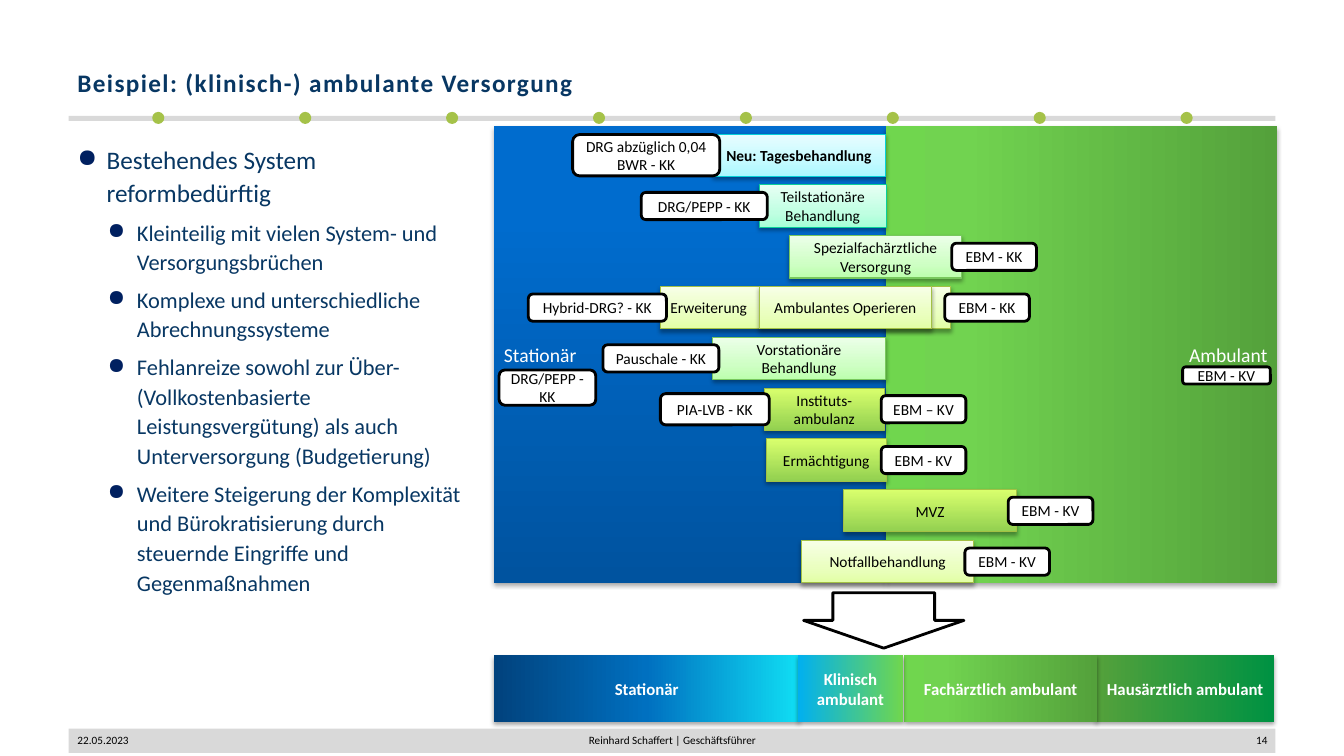
from lxml import etree
from pptx import Presentation
from pptx.dml.color import RGBColor
from pptx.enum.shapes import MSO_SHAPE
from pptx.enum.text import MSO_ANCHOR, PP_ALIGN
from pptx.oxml.ns import qn
from pptx.util import Inches, Pt

BLACK = RGBColor(0, 0, 0)
WHITE = RGBColor(255, 255, 255)
NAVY = RGBColor(0x08, 0x37, 0x63)
BULLET = RGBColor(0x00, 0x20, 0x60)
GREY = RGBColor(0xD9, 0xD9, 0xD9)
DOT_GREEN = RGBColor(0xA5, 0xC2, 0x49)
FONT = "Calibri"


def stops(*pairs):
    return [(position, RGBColor.from_string(color)) for position, color in pairs]


# Gradient stops of the panels and phases
BLUE_PANEL = stops((0, "00539F"), (80, "006CCE"), (100, "006DCF"))
GREEN_PANEL = stops((0, "54A13B"), (80, "71D350"), (100, "70D64E"))
BLUE_PHASE = stops((0, "01427D"), (50, "0070C0"), (100, "10DEF4"))
CLINIC_PHASE = stops((0, "00B0F0"), (100, "70D64E"))
FAMILY_PHASE = stops((1, "009242"), (100, "54A13B"))

# Bar styles: gradient stops and border colour
CYAN = (stops((0, "ABF8FF"), (35, "C3FAFF"), (100, "E8FDFF")), RGBColor(0x06, 0xD0, 0xD9))
MINT = (stops((0, "A6FFD7"), (35, "C0FFE2"), (100, "E7FFF4")), RGBColor(0x0B, 0xCF, 0x9A))
PALE_GREEN = (stops((0, "BCFFAD"), (35, "CFFFC5"), (100, "ECFFE9")), RGBColor(0x78, 0xC8, 0x5D))
PALE_LIME = (stops((0, "E2FFA5"), (35, "EAFFBF"), (100, "F7FFE7")), RGBColor(0xA3, 0xC1, 0x44))
LIME = (stops((0, "92D050"), (100, "D9FF6D")), RGBColor(0xA3, 0xC1, 0x44))

# Each row: bars (left, width, style, text), tags (left, width, height, text)
ROWS = [
    ([(7.07, 1.71, CYAN, "Neu: Tagesbehandlung")], [(5.68, 1.46, 0.41, "DRG abzüglich 0,04 BWR - KK")]),
    ([(7.53, 1.26, MINT, "Teilstationäre Behandlung")], [(6.36, 1.25, 0.27, "DRG/PEPP - KK")]),
    ([(7.83, 1.71, PALE_GREEN, "Spezialfachärztliche Versorgung")], [(9.44, 0.84, 0.27, "EBM - KK")]),
    ([(6.55, 2.88, PALE_LIME, "Erweiterung"), (7.53, 1.71, PALE_LIME, "Ambulantes Operieren")],
     [(5.24, 1.37, 0.27, "Hybrid-DRG? - KK"), (9.37, 0.84, 0.27, "EBM - KK")]),
    ([(7.07, 1.71, PALE_GREEN, "Vorstationäre Behandlung")], [(5.98, 1.15, 0.27, "Pauschale - KK")]),
    ([(7.58, 1.19, LIME, "Instituts-ambulanz")],
     [(6.55, 1.08, 0.31, "PIA-LVB - KK"), (8.74, 0.84, 0.27, "EBM – KV")]),
    ([(7.6, 1.19, LIME, "Ermächtigung")], [(8.74, 0.84, 0.27, "EBM - KV")]),
    ([(8.37, 1.71, LIME, "MVZ")], [(10, 0.84, 0.27, "EBM - KV")]),
    ([(7.95, 1.71, PALE_LIME, "Notfallbehandlung")], [(9.57, 0.84, 0.27, "EBM - KV")]),
]
BULLETS = [
    "Bestehendes System reformbedürftig",
    "Kleinteilig mit vielen System- und Versorgungsbrüchen",
    "Komplexe und unterschiedliche Abrechnungssysteme",
    "Fehlanreize sowohl zur Über- (Vollkostenbasierte Leistungsvergütung) als auch "
    "Unterversorgung (Budgetierung)",
    "Weitere Steigerung der Komplexität und Bürokratisierung durch steuernde Eingriffe "
    "und Gegenmaßnahmen",
]


def write(shape, text, size, color, align=PP_ALIGN.CENTER, bold=False, anchor=MSO_ANCHOR.MIDDLE):
    frame = shape.text_frame
    frame.text = text
    frame.word_wrap = True
    frame.vertical_anchor = anchor
    paragraph = frame.paragraphs[0]
    paragraph.alignment = align
    font = paragraph.runs[0].font
    font.name, font.size, font.bold = FONT, Pt(size), bold
    font.color.rgb = color


def add_text(slide, box, *args, **options):
    shape = slide.shapes.add_textbox(*map(Inches, box))
    write(shape, *args, **options)
    return shape


def add_plain(slide, kind, box, fill, line=None, width=2):
    shape = slide.shapes.add_shape(kind, *map(Inches, box))
    shape.shadow.inherit = False
    shape.fill.solid()
    shape.fill.fore_color.rgb = fill
    if line is None:
        shape.line.fill.background()
    else:
        shape.line.color.rgb = line
        shape.line.width = Pt(width)
    return shape


def add_gradient(slide, box, gradient, angle, line=None):
    """Rectangle with a gradient (clockwise angle) and a soft shadow below."""
    shape = add_plain(slide, MSO_SHAPE.RECTANGLE, box, WHITE, line, 0.75)
    shape.fill.gradient()
    shape.fill.gradient_angle = -angle % 360
    properties = shape._element.spPr
    stop_list = properties.find(qn("a:gradFill")).find(qn("a:gsLst"))
    for stop in list(stop_list):
        stop_list.remove(stop)
    for position, color in gradient:
        stop = etree.SubElement(stop_list, qn("a:gs"), pos=str(position * 1000))
        etree.SubElement(stop, qn("a:srgbClr"), val=str(color))
    shadow = etree.SubElement(properties.find(qn("a:effectLst")), qn("a:outerShdw"),
                              blurRad=str(Pt(3.1)), dist=str(Pt(1.8)), dir="5400000", rotWithShape="0")
    color = etree.SubElement(shadow, qn("a:srgbClr"), val="000000")
    etree.SubElement(color, qn("a:alpha"), val="35000")
    return shape


def add_tag(slide, box, text):
    write(add_plain(slide, MSO_SHAPE.ROUNDED_RECTANGLE, box, WHITE, BLACK), text, 11, BLACK)


def add_header(slide, left, top, width):
    title = add_text(slide, (left, top, 9.23, 0.84), "Beispiel: (klinisch-) ambulante Versorgung",
                     18, NAVY, PP_ALIGN.LEFT, True, MSO_ANCHOR.BOTTOM)
    title.text_frame.paragraphs[0].runs[0].font._element.set("spc", "100")
    # Rule with evenly spaced dots
    add_plain(slide, MSO_SHAPE.RECTANGLE, (left + 0.01, top + 0.97, width, 0.05), GREY)
    for index in range(8):
        add_plain(slide, MSO_SHAPE.OVAL, (left + 0.84 + index * 1.457, top + 0.93, 0.12, 0.12), DOT_GREEN)


def add_bullets(slide, box):
    frame = slide.shapes.add_textbox(*map(Inches, box)).text_frame
    frame.word_wrap = True
    for index, text in enumerate(BULLETS):
        paragraph = frame.add_paragraph() if index else frame.paragraphs[0]
        paragraph.text = text
        paragraph.line_spacing = 1.1
        if index:
            paragraph.level = 1
            paragraph.space_before = Pt(6)
        properties = paragraph._p.get_or_add_pPr()
        properties.set("marL", str(Inches(0.59 if index else 0.29)))
        properties.set("indent", str(Inches(-0.29)))
        color = etree.SubElement(properties, qn("a:buClr"))
        etree.SubElement(color, qn("a:srgbClr"), val=str(BULLET))
        etree.SubElement(properties, qn("a:buChar"), char="●")
        font = paragraph.runs[0].font
        font.name, font.size = FONT, Pt(16 if index else 18)
        font.color.rgb = NAVY


def add_care_map(slide, left, top, width, height):
    # Inpatient and outpatient halves
    half = width / 2
    inpatient = add_gradient(slide, (left, top, half, height), BLUE_PANEL, 270)
    write(inpatient, "Stationär", 14, WHITE, PP_ALIGN.LEFT)
    outpatient = add_gradient(slide, (left + half, top, half, height), GREEN_PANEL, 180)
    write(outpatient, "Ambulant", 14, WHITE, PP_ALIGN.RIGHT)
    add_tag(slide, (left + 0.05, top + 2.42, 0.96, 0.35), "DRG/PEPP - KK")
    add_tag(slide, (left + 6.83, top + 2.39, 0.87, 0.17), "EBM - KV")
    # Care forms with their payment tags
    bar_height = 0.42
    for index, (bars, tags) in enumerate(ROWS):
        row_top = top + 0.08 + index * 0.504
        for bar_left, bar_width, (gradient, border), text in bars:
            bar = add_gradient(slide, (bar_left, row_top, bar_width, bar_height), gradient, 270, border)
            align = PP_ALIGN.LEFT if text == "Erweiterung" else PP_ALIGN.CENTER
            write(bar, text, 11, BLACK, align, bold=index == 0)
        for tag_left, tag_width, tag_height, text in tags:
            tag_top = row_top + (bar_height - tag_height) / 2
            add_tag(slide, (tag_left, tag_top, tag_width, tag_height), text)


def add_future_phases(slide, left, top):
    phases = [
        (0, 3.03, BLUE_PHASE, 0, "Stationär"),
        (5.97, 1.77, FAMILY_PHASE, 180, "Hausärztlich ambulant"),
        (4.07, 1.91, GREEN_PANEL, 180, "Fachärztlich ambulant"),
        (3.01, 1.05, CLINIC_PHASE, 0, "Klinisch ambulant"),
    ]
    for offset, width, gradient, angle, text in phases:
        phase = add_gradient(slide, (left + offset, top, width, 0.66), gradient, angle)
        write(phase, text, 12, WHITE, bold=True)
    arrow = add_plain(slide, MSO_SHAPE.DOWN_ARROW, (left + 3.07, top - 0.62, 1.59, 0.55), WHITE, BLACK)
    arrow.adjustments[0] = 0.635
    arrow.adjustments[1] = 0.5


def add_footer(slide, left, top, width):
    add_plain(slide, MSO_SHAPE.RECTANGLE, (left, top, width, 0.24), GREY)
    parts = [(-0.01, 3.11, "22.05.2023", PP_ALIGN.LEFT),
             (3.88, 4.22, "Reinhard Schaffert | Geschäftsführer", PP_ALIGN.CENTER),
             (8.88, 3.11, "14", PP_ALIGN.RIGHT)]
    for offset, part_width, text, align in parts:
        add_text(slide, (left + offset, top + 0.01, part_width, 0.21), text, 8, BLACK, align)


def main():
    presentation = Presentation()
    presentation.slide_width = Inches(13.33)
    presentation.slide_height = Inches(7.5)
    slide = presentation.slides.add_slide(presentation.slide_layouts[6])
    add_footer(slide, 0.68, 7.23, 11.97)
    add_header(slide, 0.67, 0.18, 11.97)
    add_bullets(slide, (0.67, 1.35, 4.18, 5.78))
    add_care_map(slide, 4.9, 1.25, 7.77, 4.53)
    add_future_phases(slide, 4.9, 6.5)
    presentation.save("out.pptx")


if __name__ == "__main__":
    main()
